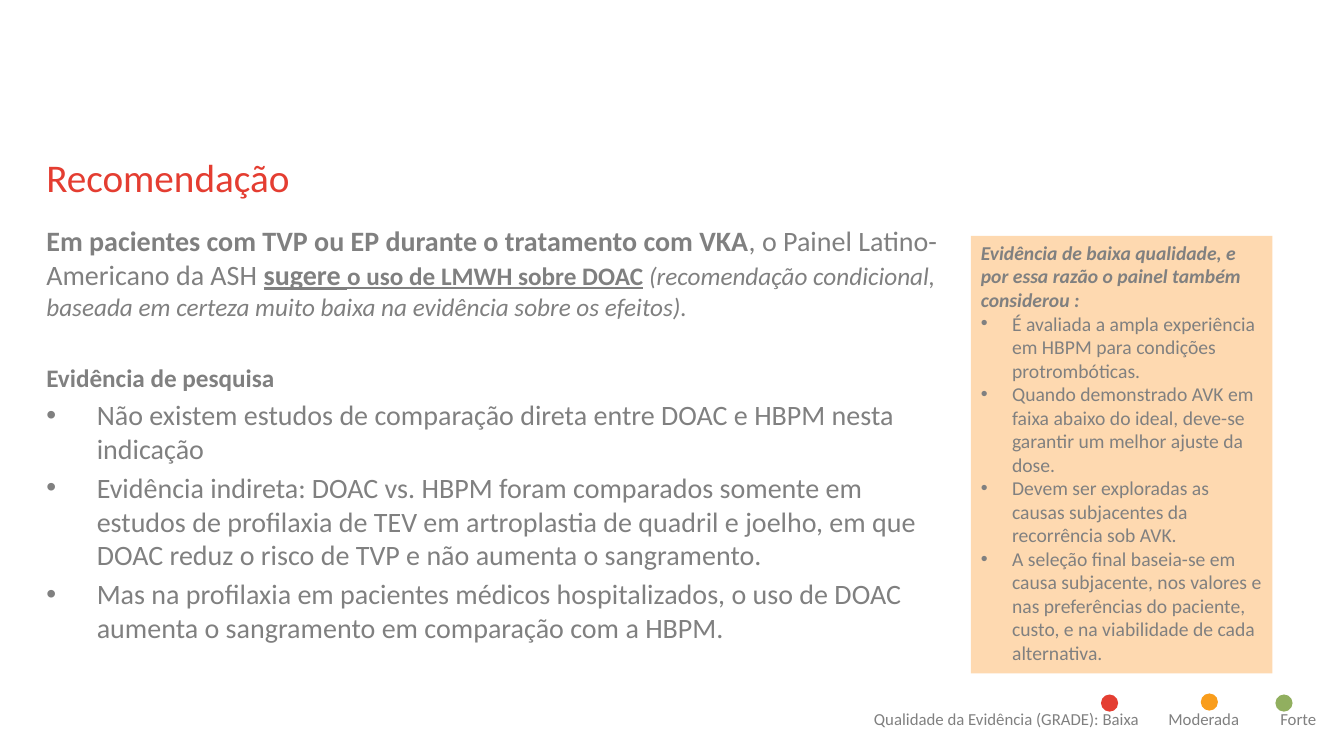
from lxml.etree import SubElement
from pptx import Presentation
from pptx.dml.color import RGBColor
from pptx.enum.shapes import MSO_SHAPE
from pptx.enum.text import MSO_ANCHOR, PP_ALIGN
from pptx.oxml.ns import qn
from pptx.util import Inches, Pt

FONT = "Calibri"
GRAY, RED = "808080", "E43D31"


def color(hex_code):
    return RGBColor.from_string(hex_code)


def add_run(paragraph, text, size, hex_code=GRAY, bold=False, italic=False, underline=False):
    run = paragraph.add_run()
    run.text = text
    font = run.font
    font.name, font.size = FONT, Pt(size)
    font.bold, font.italic, font.underline = bold, italic, underline
    font.color.rgb = color(hex_code)


def add_bullet(paragraph, indent):
    properties = paragraph._p.get_or_add_pPr()
    properties.set("marL", str(Inches(indent)))
    properties.set("indent", str(-Inches(indent)))
    SubElement(properties, qn("a:buFont"), typeface="Arial")
    SubElement(properties, qn("a:buChar"), char="•")


def add_tab_stops(paragraph, positions):
    stops = SubElement(paragraph._p.get_or_add_pPr(), qn("a:tabLst"))
    for position in positions:
        SubElement(stops, qn("a:tab"), pos=str(Inches(position)), algn="l")


def add_filled_shape(slide, kind, left, top, width, height, hex_code):
    shape = slide.shapes.add_shape(kind, Inches(left), Inches(top), Inches(width), Inches(height))
    shape.shadow.inherit = False
    shape.fill.solid()
    shape.fill.fore_color.rgb = color(hex_code)
    shape.line.fill.background()
    return shape


def add_text_frame(slide, left, top, width, height, margins=(0.1, 0.05, 0.1, 0.05)):
    box = slide.shapes.add_textbox(Inches(left), Inches(top), Inches(width), Inches(height))
    frame = box.text_frame
    frame.word_wrap = True
    frame.margin_left, frame.margin_top, frame.margin_right, frame.margin_bottom = map(Inches, margins)
    return frame


def add_title(slide, left, top, width, height):
    frame = add_text_frame(slide, left, top, width, height, (0, 0.05, 0.1, 0.05))
    add_run(frame.paragraphs[0], "Recomendação", 28, RED)


def add_recommendation(slide, left, top, width, height):
    frame = add_text_frame(slide, left, top, width, height, (0, 0, 0, 0))

    # Recommendation statement
    statement = frame.paragraphs[0]
    add_run(statement, "Em pacientes com TVP ou EP durante o tratamento com VKA", 20, bold=True)
    add_run(statement, ", o Painel Latino-Americano da ASH ", 20)
    add_run(statement, "sugere ", 20, bold=True, underline=True)
    add_run(statement, "o uso de LMWH sobre DOAC", 18, bold=True, underline=True)
    add_run(statement, " (recomendação condicional, baseada em certeza muito baixa "
            "na evidência sobre os efeitos).", 18, italic=True)

    # Research evidence
    heading = frame.add_paragraph()
    heading.space_before = Pt(29)
    add_run(heading, "Evidência de pesquisa", 18, bold=True)
    findings = [
        [("Não existem estudos de comparação direta entre DOAC e HBPM nesta indicação", 20)],
        [("Evidência indireta:", 20), (" ", 18),
         ("DOAC vs. HBPM foram comparados somente em estudos de profilaxia de TEV em artroplastia "
          "de quadril e joelho, em que DOAC reduz o risco de TVP e não aumenta o sangramento.", 20)],
        [("Mas na profilaxia em pacientes médicos hospitalizados, o uso de DOAC aumenta "
          "o sangramento em comparação com a HBPM.", 20)],
    ]
    for finding in findings:
        paragraph = frame.add_paragraph()
        paragraph.space_before = Pt(4)
        add_bullet(paragraph, 0.5)
        for text, size in finding:
            add_run(paragraph, text, size)


def add_considerations(slide, left, top, width, height):
    panel = add_filled_shape(slide, MSO_SHAPE.RECTANGLE, left, top, width, height, "FED9B0")
    frame = panel.text_frame
    frame.word_wrap = True
    frame.vertical_anchor = MSO_ANCHOR.TOP
    heading = frame.paragraphs[0]
    heading.alignment = PP_ALIGN.LEFT
    add_run(heading, "Evidência de baixa qualidade, e por essa razão o painel também considerou :",
            14, bold=True, italic=True)
    considerations = [
        "É avaliada a ampla experiência em HBPM para condições protrombóticas.",
        "Quando demonstrado AVK em faixa abaixo do ideal, deve-se garantir um melhor ajuste da dose.",
        "Devem ser exploradas as causas subjacentes da recorrência sob AVK.",
        "A seleção final baseia-se em causa subjacente, nos valores e nas preferências do paciente, "
        "custo, e na viabilidade de cada alternativa.",
    ]
    for consideration in considerations:
        paragraph = frame.add_paragraph()
        paragraph.alignment = PP_ALIGN.LEFT
        add_bullet(paragraph, 0.31)
        add_run(paragraph, consideration, 14)


def add_evidence_legend(slide, left, top, width, height):
    # Labels
    labels = add_text_frame(slide, left, top, width, height).paragraphs[0]
    add_tab_stops(labels, (2.92, 4.03))
    add_run(labels, "Qualidade da Evidência (GRADE): Baixa", 12)
    for level in ("Moderada", "Forte"):
        add_run(labels, "\t", 18)
        add_run(labels, level, 12)

    # Level dots
    dots = [(2.35, -0.01, "E43E32"), (3.34, -0.02, "F99D1C"), (4.08, -0.01, "91AF5F")]
    for offset_x, offset_y, hex_code in dots:
        add_filled_shape(slide, MSO_SHAPE.OVAL, left + offset_x, top + offset_y, 0.17, 0.17, hex_code)


def main():
    presentation = Presentation()
    presentation.slide_width, presentation.slide_height = Inches(13.33), Inches(7.5)
    slide = presentation.slides.add_slide(presentation.slide_layouts[6])
    add_considerations(slide, 9.63, 2.34, 2.99, 4.34)
    add_evidence_legend(slide, 8.57, 6.9, 4.76, 0.3)
    add_title(slide, 0.46, 1.47, 12, 0.78)
    add_recommendation(slide, 0.46, 2.22, 8.98, 3.88)
    presentation.save("out.pptx")


if __name__ == "__main__":
    main()
